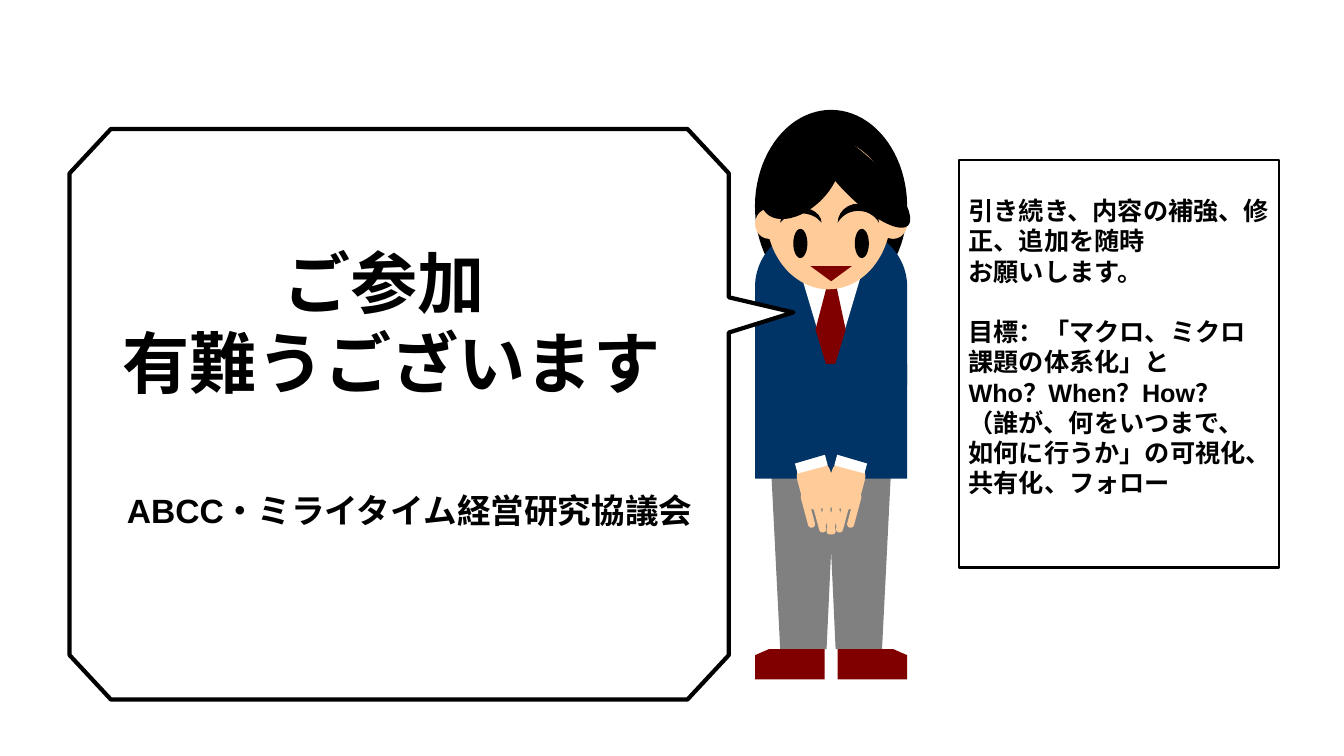
from dataclasses import dataclass, replace
from math import cos, radians, sin
from typing import Optional, Union

from pptx import Presentation
from pptx.dml.color import RGBColor
from pptx.enum.shapes import MSO_SHAPE as Preset
from pptx.enum.text import MSO_ANCHOR as Anchor, PP_ALIGN as Align
from pptx.shapes.autoshape import Shape
from pptx.shapes.shapetree import GroupShapes
from pptx.text.text import TextFrame
from pptx.util import Inches, Pt

CELL = Inches(0.1)
COLUMNS, ROWS = 133.33, 75
FIGURE_AXIS = 82.45

BLACK = RGBColor(0x00, 0x00, 0x00)
WHITE = RGBColor(0xFF, 0xFF, 0xFF)
NAVY = RGBColor(0x00, 0x33, 0x66)
GRAY = RGBColor(0x80, 0x80, 0x80)
MAROON = RGBColor(0x80, 0x00, 0x00)
SKIN = RGBColor(0xFF, 0xCC, 0x99)

Point = tuple[float, float]


@dataclass(frozen=True)
class Part:
    """A preset shape placed by column and row."""
    preset: Preset
    column: float
    row: float
    columns: float
    rows: float
    fill: RGBColor
    turn: float = 0
    adjustment: Optional[float] = None

    def mirrored(self) -> "Part":
        """Return the part reflected across the figure's axis."""
        return replace(self, column=2 * FIGURE_AXIS - self.column - self.columns,
                       turn=-self.turn)


@dataclass(frozen=True)
class Outline:
    """A closed polygon whose points are columns and rows."""
    points: tuple[Point, ...]
    fill: RGBColor

    def mirrored(self) -> "Outline":
        """Return the outline reflected across the figure's axis."""
        return replace(self, points=tuple((2 * FIGURE_AXIS - x, y) for x, y in self.points))


@dataclass(frozen=True)
class Line:
    """One paragraph of text."""
    text: str
    space_before: float = 0


Piece = Union[Part, Outline]


def pair(piece: Piece) -> list[Piece]:
    """Return a piece and its mirror image."""
    return [piece, piece.mirrored()]


def arc(radius_x: float, radius_y: float) -> tuple[Point, ...]:
    """Return points over the top of the head from left to right."""
    angles = [radians(149 + 242 * step / 60) for step in range(61)]
    return tuple((FIGURE_AXIS + radius_x * cos(angle), 20.5 + radius_y * sin(angle))
                 for angle in angles)


def finger(column: float, row: float, columns: float, rows: float, turn: float = -15) -> Part:
    """Return a fully rounded finger."""
    return Part(Preset.ROUNDED_RECTANGLE, column, row, columns, rows, SKIN, turn, 0.5)


ARM: list[Piece] = [
    Part(Preset.ROUNDED_RECTANGLE, 79.3, 45.8, 3.4, 4.7, SKIN, -15, 0.385),
    finger(79.8, 48.9, 0.7, 3.5),
    finger(80.8, 48.6, 0.7, 4.3),
    finger(81.7, 48.4, 0.7, 4.7),
    finger(82.5, 48.2, 0.7, 4.3),
    finger(82.5, 46.2, 1.1, 3.4, -60),
    Part(Preset.RECTANGLE, 78.9, 45.2, 3.1, 1.4, WHITE, -15),
    Outline(((75, 33.1), (78.8, 46), (82.2, 45), (79, 32)), NAVY),
]

FIGURE: list[Piece] = [
    Outline(arc(7.55, 9.6) + arc(4.65, 5.9)[::-1], BLACK),
    Part(Preset.ROUNDED_RECTANGLE, 74.9, 22.7, 15.1, 20.8, NAVY, 0, 0.381),
    *pair(Outline(((76.2, 40.6), (77.4, 64.4), (82, 64.4), (83.1, 40.6)), GRAY)),
    Part(Preset.ISOSCELES_TRIANGLE, 79, 25.7, 6.9, 11.6, WHITE, 180),
    Outline(((81.5, 26.7), (81.9, 28.1), (83, 28.1), (83.4, 26.7)), MAROON),
    Outline(((82, 28.5), (83, 28.5), (83.9, 32.7), (82.4, 37.6), (80.9, 32.7)), MAROON),
    Part(Preset.RECTANGLE, 74.9, 36.1, 15.1, 11.4, NAVY),
    Part(Preset.OVAL, 76, 13.8, 12.4, 14.9, SKIN),
    *pair(Outline(((74.9, 65), (76.28, 64.4), (81.8, 64.4), (81.8, 67.4), (74.9, 67.4)),
                  MAROON)),
    *ARM,
    *[piece.mirrored() for piece in ARM],
    *pair(Part(Preset.OVAL, 74.9, 20.7, 2.8, 3, SKIN)),
    Part(Preset.OVAL, 74.6, 14.8, 9.6, 5.9, BLACK, -45),
    Part(Preset.OVAL, 78.9, 15.7, 13.1, 4.1, BLACK, 45),
    Part(Preset.MOON, 78.7, 19.3, 1.5, 4.1, BLACK, 90, 0.379),
    Part(Preset.MOON, 84.2, 19.1, 1.9, 4.1, BLACK, 90, 0.379),
    *pair(Part(Preset.OVAL, 78.7, 22.7, 1.4, 2.9, BLACK)),
    Part(Preset.ISOSCELES_TRIANGLE, 80.4, 26.4, 4.1, 1.5, MAROON, 180),
]

BUBBLE = Outline(((72.3, 29.5), (78.7, 31), (72.3, 33), (72.3, 65), (68.2, 69.4), (11, 69.4),
                  (6.9, 65), (6.9, 17.2), (11, 12.8), (68.2, 12.8), (72.3, 17.2)), WHITE)

THANKS = [Line("ご参加 "), Line("有難うございます")]
ORGANISER = [Line("ABCC・ミライタイム経営研究協議会")]
REQUEST = [
    Line("引き続き、内容の補強、修正、追加を随時"),
    Line("お願いします。"),
    Line("目標：「マクロ、ミクロ課題の体系化」と", 21.6),
    Line("Who？When？How？"),
    Line("（誰が、何をいつまで、如何に行うか」の可視化、共有化、フォロー"),
]


def cells(*counts: float) -> list[int]:
    """Convert grid counts to lengths."""
    return [round(count * CELL) for count in counts]


def draw(shapes: GroupShapes, piece: Piece) -> Shape:
    """Draw a part or an outline without a line."""
    if isinstance(piece, Outline):
        start, *rest = [cells(*point) for point in piece.points]
        builder = shapes.build_freeform(*start)
        builder.add_line_segments(rest)
        shape = builder.convert_to_shape()
    else:
        shape = shapes.add_shape(piece.preset, *cells(piece.column, piece.row,
                                                      piece.columns, piece.rows))
        shape.rotation = piece.turn
        if piece.adjustment is not None:
            shape.adjustments[0] = piece.adjustment
    shape.shadow.inherit = False
    shape.fill.solid()
    shape.fill.fore_color.rgb = piece.fill
    shape.line.fill.background()
    return shape


def outline(shape: Shape, width: float) -> None:
    """Give a shape a black line."""
    shape.line.color.rgb = BLACK
    shape.line.width = Pt(width)


def write(frame: TextFrame, lines: list[Line], size: float, font: str = "Arial",
          align: Align = Align.LEFT, wrap: bool = True) -> None:
    """Fill a text frame with bold black paragraphs."""
    frame.word_wrap = wrap
    frame.vertical_anchor = Anchor.TOP
    for index, line in enumerate(lines):
        paragraph = frame.paragraphs[0] if index == 0 else frame.add_paragraph()
        paragraph.text = line.text
        paragraph.alignment = align
        paragraph.space_before = Pt(line.space_before)
        paragraph.font.name = font
        paragraph.font.size = Pt(size)
        paragraph.font.bold = True
        paragraph.font.color.rgb = BLACK


def main() -> None:
    """Build and save the closing slide."""
    presentation = Presentation()
    presentation.slide_width, presentation.slide_height = cells(COLUMNS, ROWS)
    slide = presentation.slides.add_slide(presentation.slide_layouts[6])

    figure = slide.shapes.add_group_shape()
    for piece in FIGURE:
        draw(figure.shapes, piece)

    speech = slide.shapes.add_group_shape()
    outline(draw(speech.shapes, BUBBLE), 3)
    thanks = speech.shapes.add_textbox(*cells(10, 23.4, 57.7, 17.2))
    write(thanks.text_frame, THANKS, 48, "Noto Sans CJK JP", Align.CENTER, False)

    organiser = slide.shapes.add_textbox(*cells(11.6, 48.1, 59.9, 5))
    write(organiser.text_frame, ORGANISER, 24)

    request = draw(slide.shapes, Part(Preset.RECTANGLE, 95.1, 15.9, 31.8, 40.4, WHITE))
    outline(request, 1.5)
    request.text_frame.margin_top = Inches(0.35)
    write(request.text_frame, REQUEST, 18)

    presentation.save("out.pptx")


if __name__ == "__main__":
    main()
